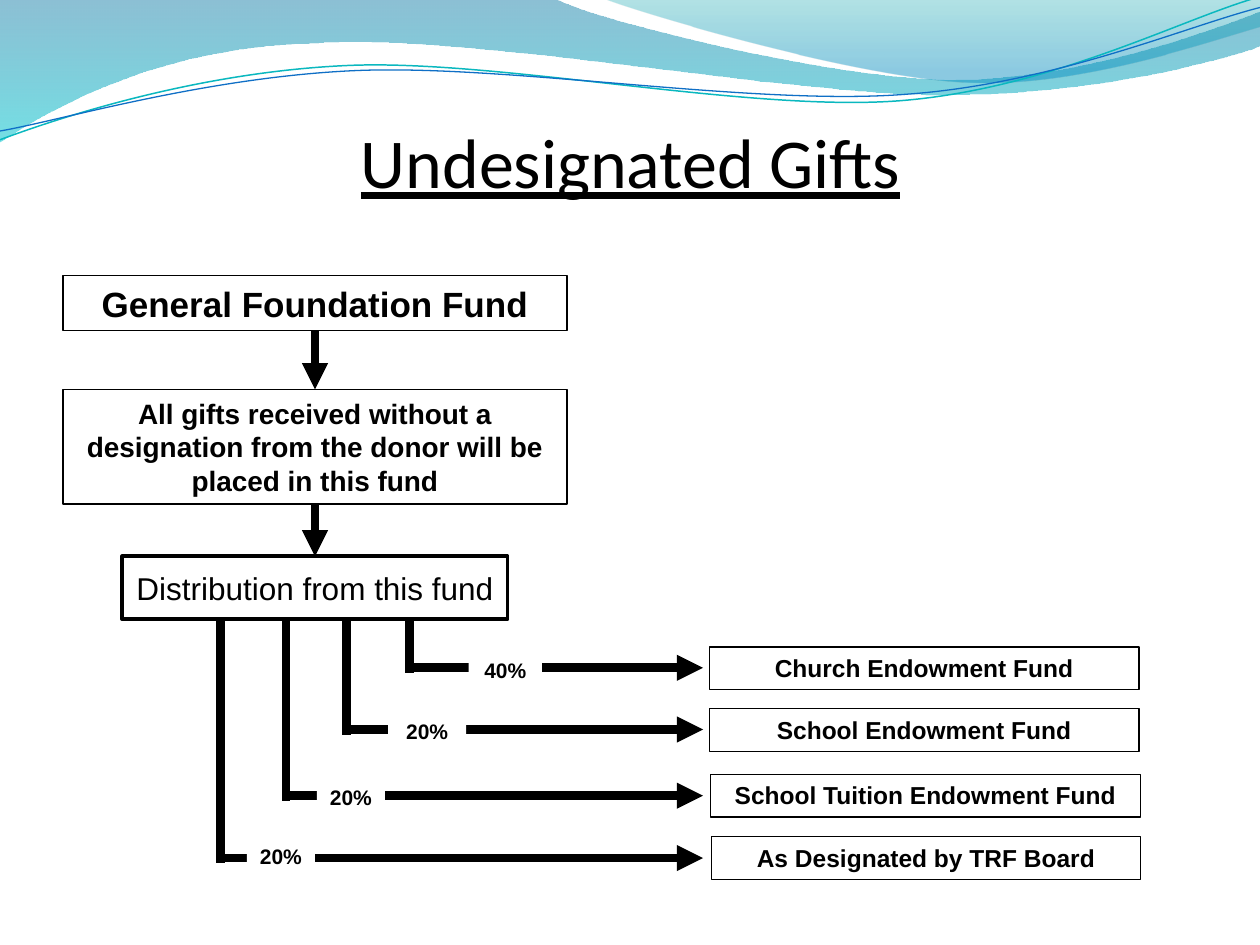
import math

from lxml import etree
from pptx import Presentation
from pptx import util as u
from pptx.dml.color import RGBColor
from pptx.enum import shapes, text
from pptx.oxml.ns import qn

COLORS = {
    "ink": "000000", "paper": "FFFFFF",
    "deep": "0074A1", "aqua": "00C6CF", "teal": "00A1A9", "sky": "008BBF",
    "teal line": "0AB8BF", "blue line": "0F6FC6",
}
color = {name: RGBColor.from_string(value) for name, value in COLORS.items()}

deck = Presentation()
deck.slide_width, deck.slide_height = u.Inches(10), u.Inches(7.5)
page = deck.slides.add_slide(deck.slide_layouts[5])
cell = deck.slide_width // 100  # square grid: 100 columns by 75 rows


def add_box(left, top, width, height, words, size, bold=True, fill=None,
            border=0, wrap=True, anchor=text.MSO_ANCHOR.TOP):
    box = page.shapes.add_shape(
        shapes.MSO_SHAPE.RECTANGLE,
        *[round(n * cell) for n in (left, top, width, height)])
    box.shadow.inherit = False
    if fill:
        box.fill.solid()
        box.fill.fore_color.rgb = color[fill]
    else:
        box.fill.background()
    if border:
        box.line.color.rgb = color["ink"]
        box.line.width = u.Pt(border)
    else:
        box.line.fill.background()
    frame = box.text_frame
    frame.text = words
    frame.word_wrap = wrap
    frame.vertical_anchor = anchor
    frame.auto_size = text.MSO_AUTO_SIZE.SHAPE_TO_FIT_TEXT
    para = frame.paragraphs[0]
    para.alignment = text.PP_ALIGN.CENTER
    para.font.name, para.font.size, para.font.bold = "Arial", u.Pt(size), bold
    para.font.color.rgb = color["ink"]
    return box


def add_line(x1, y1, x2, y2, arrow=False):
    line = page.shapes.add_connector(
        shapes.MSO_CONNECTOR.STRAIGHT,
        *[round(n * cell) for n in (x1, y1, x2, y2)])
    line.line.color.rgb = color["ink"]
    line.line.width = u.Pt(5)
    if arrow:
        etree.SubElement(line.line._get_or_add_ln(), qn("a:tailEnd"), type="triangle")
    etree.SubElement(line._element.spPr, qn("a:effectLst"))
    return line


# Waves: a tuple of two is a straight step, a tuple of six a Bezier curve
waves = [
    {"steps": [(0, 0), (44, -0.1), (47.6, 1.7, 66.4, 6.3, 75.8, 6.3),
               (85.3, 6.3, 95.8, 2.6, 100, 0.9), (100.1, 3.6),
               (98.3, 4.4, 87, 7.6, 74.6, 7.5), (62.2, 7.5, 38.2, 2.8, 25.7, 3.4),
               (12.9, 3.6, 4.6, 8.3, -0.1, 11.3)],
     "stops": [(0, "deep", 45), (1, "aqua", 55)]},
    {"steps": [(47.9, -0.1), (50.9, 1.1, 68.2, 6.2, 76.9, 6.5),
               (85.6, 6.9, 96.1, 3.2, 100, 2.1), (100, 0)],
     "stops": [(0, "teal", 30), (0.8, "sky", 45)]},
    {"steps": [(0, 11.1), (4.8, 9.3, 15.8, 5.7, 27.7, 5.2),
               (39.5, 4.7, 59.3, 8.9, 71.3, 8), (83.3, 7.1, 93.8, 1.5, 99.8, -0.2)],
     "line": ("teal line", 0.85), "center": (49.9, 5.75)},
    {"steps": [(0, 10.4), (4.7, 9.6, 16.4, 6.1, 28.3, 5.6),
               (40.3, 5.1, 59.7, 8.4, 71.7, 7.5), (83.6, 6.7, 94.1, 2.1, 100, 0.6)],
     "line": ("blue line", 0.75), "center": (49.95, 5.9)},
]
tilt = 2.7  # degrees the two wave lines lean to the left
sine, cosine = math.sin(math.radians(tilt)), math.cos(math.radians(tilt))
fine = 100  # outline units in a cell
for wave in waves:
    points = [step[i:i + 2] for step in wave["steps"] for i in range(0, len(step), 2)]
    if "line" in wave:  # level the outline, as the shape itself is turned
        cx, cy = wave["center"]
        points = [(cx + (x - cx) * cosine - (y - cy) * sine,
                   cy + (x - cx) * sine + (y - cy) * cosine) for x, y in points]
    points = [(round(x * fine), round(y * fine)) for x, y in points]
    builder = page.shapes.build_freeform(*points[0], scale=cell / fine)
    builder.add_line_segments(points[1:], close="stops" in wave)
    ribbon = builder.convert_to_shape()
    ribbon.shadow.inherit = False

    # Merge each three straight steps of a curve into one Bezier step
    straights = iter(ribbon._element.spPr.findall(".//" + qn("a:lnTo")))
    for step in wave["steps"][1:]:
        first = next(straights)
        if len(step) == 6:
            curve = etree.Element(qn("a:cubicBezTo"))
            first.addprevious(curve)
            for straight in (first, next(straights), next(straights)):
                curve.append(straight[0])
                straight.getparent().remove(straight)

    if "line" in wave:
        name, width = wave["line"]
        ribbon.rotation = 360 - tilt
        ribbon.fill.background()
        ribbon.line.color.rgb = color[name]
        ribbon.line.width = u.Pt(width)
        continue
    ribbon.line.fill.background()
    ribbon.fill.gradient()
    ribbon.fill.gradient_angle = 270
    for stop, (position, name, _) in zip(ribbon.fill.gradient_stops, wave["stops"]):
        stop.position = position
        stop.color.rgb = color[name]
    tints = ribbon._element.spPr.findall(".//" + qn("a:srgbClr"))
    for tint, (_, _, opacity) in zip(tints, wave["stops"]):
        etree.SubElement(tint, qn("a:alpha"), val=str(opacity * 1000))

# Title
title = page.shapes.title
title.left, title.top, title.width, title.height = [
    round(n * cell) for n in (24.2, 8.9, 51.7, 7.7)]
title.text_frame.text = "Undesignated Gifts"
title.text_frame.word_wrap = True
title.text_frame.auto_size = text.MSO_AUTO_SIZE.SHAPE_TO_FIT_TEXT
title.text_frame.vertical_anchor = text.MSO_ANCHOR.TOP
para = title.text_frame.paragraphs[0]
para.alignment = text.PP_ALIGN.CENTER
para.font.name, para.font.size, para.font.underline = "Calibri", u.Pt(40), True
para.font.color.rgb = color["ink"]

# Branches: drop column, arrow row, share label, fund box
branches = [
    (32.5, 53, ("40%", 37.2, 51.7, 5.8, True), ("Church Endowment Fund", 56.3, 51.35)),
    (27.5, 57.9, ("20%", 30.8, 56.55, 6.2, True), ("School Endowment Fund", 56.3, 56.25)),
    (22.7, 63.15, ("20%", 25.15, 61.8, 5.4, False),
     ("School Tuition Endowment Fund", 56.4, 61.45)),
    (17.5, 68.1, ("20%", 19.6, 66.45, 5.4, False),
     ("As Designated by TRF Board", 56.45, 66.4)),
]
for column, row, (share, left, top, width, wrap), (fund, fund_left, fund_top) in branches:
    add_line(column, 48.5, column, row + 0.4)
    add_line(column, row, 55.8, row, arrow=True)
    add_box(left, top, width, 3, share, 12, fill="paper", wrap=wrap)
    add_box(fund_left, fund_top, 34.1, 3.4, fund, 14, border=0.75)

# Main column of boxes, joined from top to bottom
middle = text.MSO_ANCHOR.MIDDLE
chain = [
    add_box(5, 21.85, 40, 4.4, "General Foundation Fund", 20, border=0.75, anchor=middle),
    add_box(5, 30.9, 40, 9.1, "All gifts received without a designation from the donor "
            "will be placed in this fund", 16, border=0.75, anchor=middle),
    add_box(9.7, 44.15, 30.6, 5, "Distribution from this fund", 18, bold=False,
            fill="paper", border=2, wrap=False, anchor=middle),
]
for upper, lower in zip(chain, chain[1:]):
    arrow = add_line(25, 26.25, 25, 30.9, arrow=True)
    arrow.begin_connect(upper, 2)
    arrow.end_connect(lower, 0)

deck.save("out.pptx")
